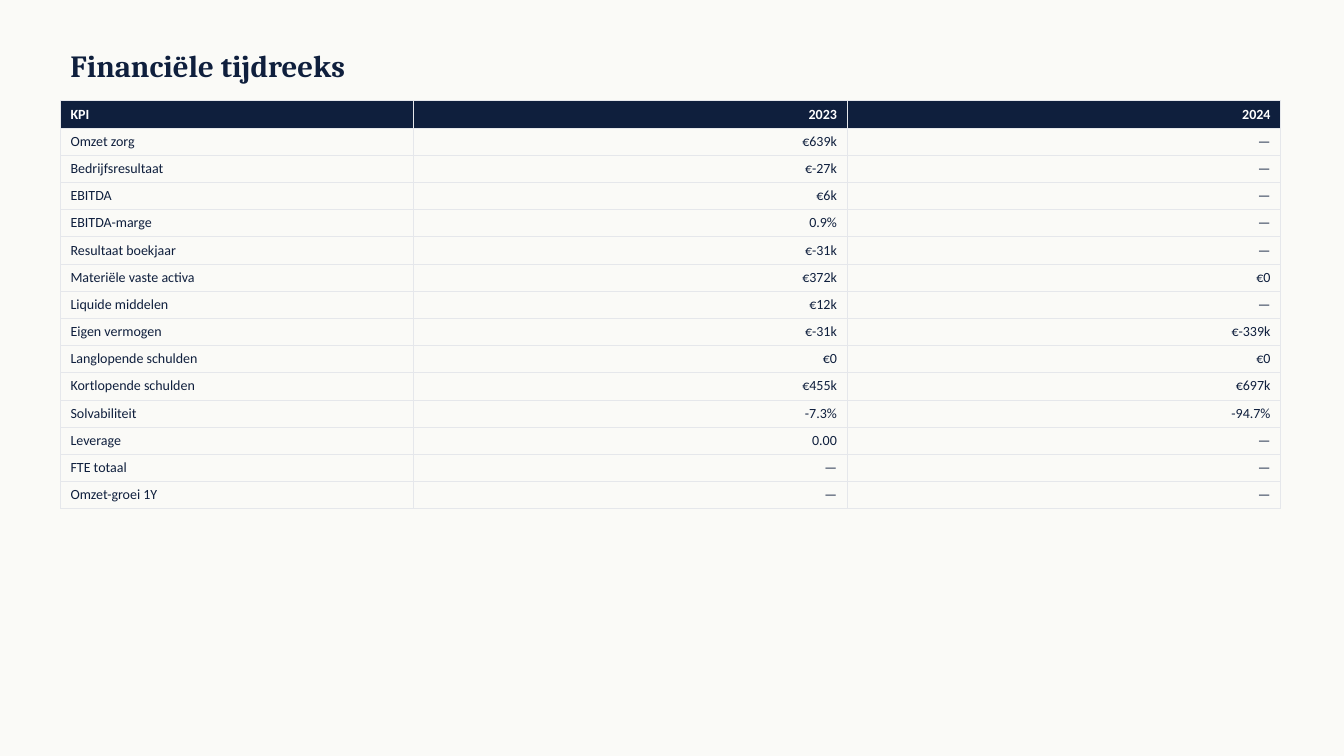
from typing import NamedTuple

from lxml import etree
from pptx import Presentation
from pptx.dml.color import RGBColor
from pptx.enum.text import MSO_ANCHOR, PP_ALIGN
from pptx.oxml.ns import qn
from pptx.util import Pt

PX = 9144
NAVY = RGBColor(0x0F, 0x1F, 0x3D)
WHITE = RGBColor(0xFF, 0xFF, 0xFF)
CREAM = RGBColor(0xFA, 0xFA, 0xF7)
GRID = RGBColor(0xE5, 0xE7, 0xEB)
LEFT = PP_ALIGN.LEFT
RIGHT = PP_ALIGN.RIGHT
MIDDLE = MSO_ANCHOR.MIDDLE
EDGES = ("a:lnL", "a:lnR", "a:lnT", "a:lnB")
WIDTHS = (350, 430, 430)
ROW = 27


class Line(NamedTuple):
    name: str
    prior: str = "—"
    last: str = "—"


LINES = (
    Line("KPI", "2023", "2024"),
    Line("Omzet zorg", "€639k"),
    Line("Bedrijfsresultaat", "€-27k"),
    Line("EBITDA", "€6k"),
    Line("EBITDA-marge", "0.9%"),
    Line("Resultaat boekjaar", "€-31k"),
    Line("Materiële vaste activa", "€372k", "€0"),
    Line("Liquide middelen", "€12k"),
    Line("Eigen vermogen", "€-31k", "€-339k"),
    Line("Langlopende schulden", "€0", "€0"),
    Line("Kortlopende schulden", "€455k", "€697k"),
    Line("Solvabiliteit", "-7.3%", "-94.7%"),
    Line("Leverage", "0.00"),
    Line("FTE totaal"),
    Line("Omzet-groei 1Y"),
)


def px(size: int) -> int:
    return size * PX


def write(frame, text: str, *, size: int = 10, face: str = "Calibri",
          color: RGBColor = NAVY, bold: bool = False, align=LEFT) -> None:
    para = frame.paragraphs[0]
    para.alignment = align
    run = para.add_run()
    run.text = text
    font = run.font
    font.size = Pt(size)
    font.name = face
    font.bold = bold
    font.color.rgb = color


def border(cell) -> None:
    props = cell._tc.get_or_add_tcPr()
    for edge in EDGES:
        line = etree.SubElement(props, qn(edge), w=str(Pt(0.5)))
        fill = etree.SubElement(line, qn("a:solidFill"))
        etree.SubElement(fill, qn("a:srgbClr"), val=str(GRID))


def draw_title(slide) -> None:
    box = slide.shapes.add_textbox(px(60), px(40), px(1200), px(50))
    frame = box.text_frame
    frame.word_wrap = True
    frame.vertical_anchor = MIDDLE
    write(frame, "Financiële tijdreeks", size=22, face="Cambria", bold=True)


def draw_table(slide, lines: tuple[Line, ...]) -> None:
    table = slide.shapes.add_table(
        len(lines), len(WIDTHS), px(60), px(100),
        px(sum(WIDTHS)), px(ROW * len(lines))).table
    table.horz_banding = False
    for col, width in zip(table.columns, WIDTHS):
        col.width = px(width)
    for i, line in enumerate(lines):
        head = i == 0
        table.rows[i].height = px(ROW)
        for j, text in enumerate(line):
            cell = table.cell(i, j)
            border(cell)
            if head:
                cell.fill.solid()
                cell.fill.fore_color.rgb = NAVY
            else:
                cell.fill.background()
            write(cell.text_frame, text, bold=head,
                  color=WHITE if head else NAVY,
                  align=RIGHT if j else LEFT)


def main() -> None:
    deck = Presentation()
    deck.slide_width = px(1333)
    deck.slide_height = px(750)
    slide = deck.slides.add_slide(deck.slide_layouts[6])
    slide.background.fill.solid()
    slide.background.fill.fore_color.rgb = CREAM
    draw_title(slide)
    draw_table(slide, LINES)
    deck.save("out.pptx")


if __name__ == "__main__":
    main()
